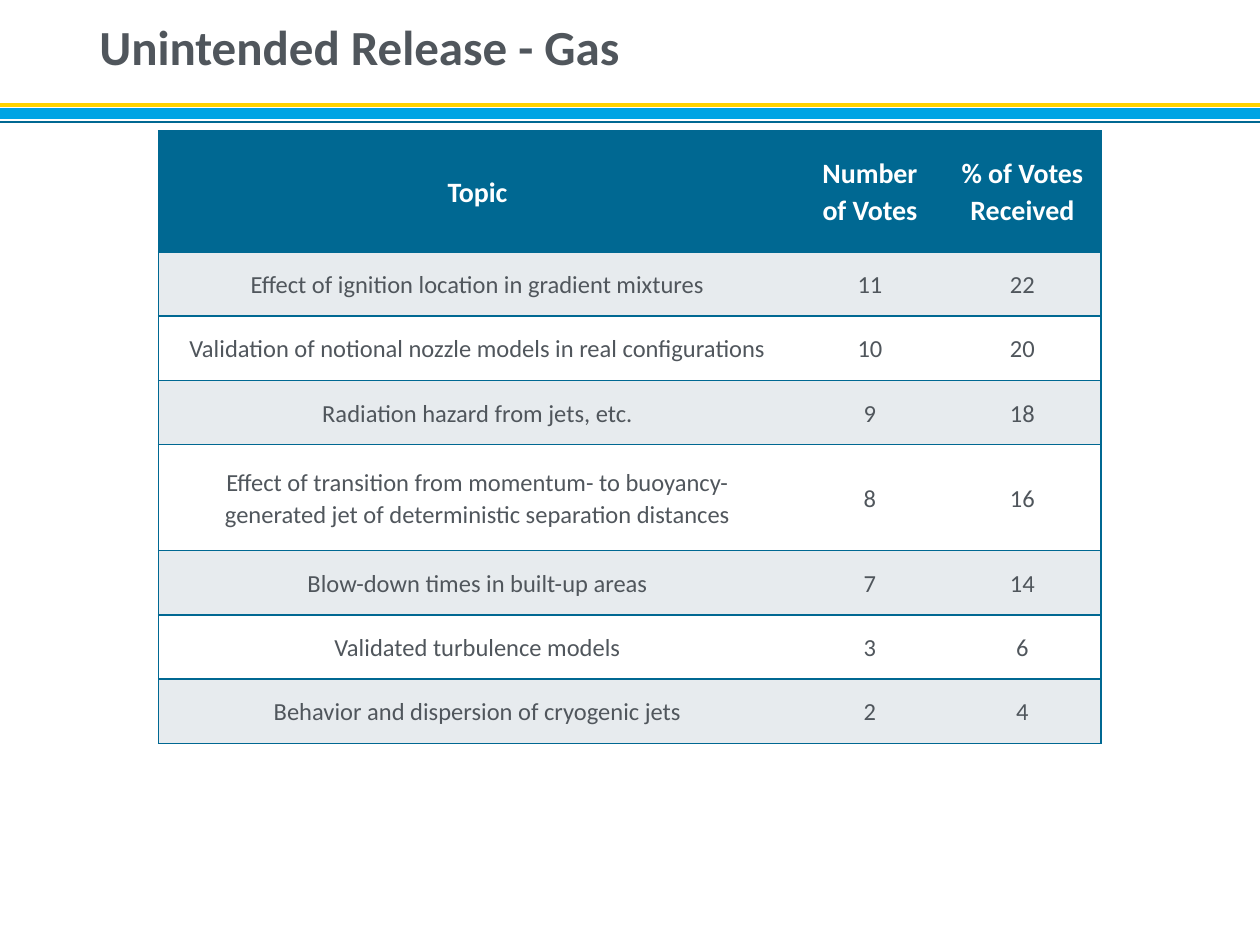
"""Build the slide with the vote table on unintended gas releases."""
from lxml.etree import SubElement
from pptx import Presentation
from pptx.dml.color import RGBColor
from pptx.enum.shapes import MSO_CONNECTOR
from pptx.enum.text import MSO_ANCHOR, PP_ALIGN
from pptx.oxml.ns import qn
from pptx.util import Inches, Pt

FONT = "Calibri"
COLORS = {
    "text": "50565C",
    "teal": "006892",
    "blue": "00A4E4",
    "yellow": "FFD200",
    "band": "E7EBEE",
    "white": "FFFFFF",
}
STRIPES = [(0.9, "blue", 6), (0.97, "teal", 1.5), (0.83, "yellow", 2.25)]
COLUMN_WIDTHS = [5.06, 1.17, 1.25]
HEADER_HEIGHT, ROW_HEIGHT, TALL_ROW_HEIGHT = 0.96, 0.51, 0.84
TALL_ROW = 4
ROWS = [
    ("Topic", "Number of Votes", "% of Votes Received"),
    ("Effect of ignition location in gradient mixtures", "11", "22"),
    ("Validation of notional nozzle models in real configurations", "10", "20"),
    ("Radiation hazard from jets, etc.", "9", "18"),
    ("Effect of transition from momentum- to buoyancy- "
     "generated jet of deterministic separation distances", "8", "16"),
    ("Blow-down times in built-up areas", "7", "14"),
    ("Validated turbulence models", "3", "6"),
    ("Behavior and dispersion of cryogenic jets", "2", "4"),
]


def rgb(name):
    return RGBColor.from_string(COLORS[name])


def style_text(paragraph, size, color, bold, spacing):
    paragraph.line_spacing = spacing
    for span in paragraph.runs:
        span.font.name = FONT
        span.font.size = Pt(size)
        span.font.bold = bold
        span.font.color.rgb = rgb(color)


def add_stripe(page, top, color, width):
    stripe = page.shapes.add_connector(
        MSO_CONNECTOR.STRAIGHT, 0, Inches(top), Inches(10), Inches(top))
    stripe.line.color.rgb = rgb(color)
    stripe.line.width = Pt(width)
    SubElement(stripe.element.spPr, qn("a:effectLst"))


def add_title(page, text):
    box = page.shapes.add_textbox(Inches(0.69), 0, Inches(8.62), Inches(0.79))
    frame = box.text_frame
    frame.word_wrap = True
    frame.vertical_anchor = MSO_ANCHOR.MIDDLE
    frame.text = text
    style_text(frame.paragraphs[0], 28, "text", True, 0.9)


def set_borders(cell, visible_sides):
    properties = cell._tc.get_or_add_tcPr()
    for side in "LRTB":
        border = SubElement(properties, qn(f"a:ln{side}"), w=str(Pt(1)))
        if side in visible_sides:
            fill = SubElement(border, qn("a:solidFill"))
            SubElement(fill, qn("a:srgbClr"), val=COLORS["teal"])
        else:
            SubElement(border, qn("a:noFill"))


def fill_cell(cell, text, row, column):
    is_header = row == 0
    sides = {0: "LTB", len(COLUMN_WIDTHS) - 1: "RTB"}.get(column, "TB")
    set_borders(cell, sides)
    cell.fill.solid()
    cell.fill.fore_color.rgb = rgb(
        "teal" if is_header else "band" if row % 2 else "white")
    cell.vertical_anchor = MSO_ANCHOR.MIDDLE
    cell.margin_left = cell.margin_right = Inches(0.13)
    cell.margin_top = cell.margin_bottom = 0
    cell.text_frame.text = text
    paragraph = cell.text_frame.paragraphs[0]
    paragraph.alignment = PP_ALIGN.CENTER
    style_text(paragraph, 16 if is_header else 14,
               "white" if is_header else "text", is_header, 1.07)


def add_vote_table(page):
    heights = [ROW_HEIGHT] * len(ROWS)
    heights[0], heights[TALL_ROW] = HEADER_HEIGHT, TALL_ROW_HEIGHT
    table = page.shapes.add_table(
        len(ROWS), len(COLUMN_WIDTHS), Inches(1.26), Inches(1.04),
        Inches(sum(COLUMN_WIDTHS)), Inches(sum(heights))).table
    for column, width in zip(table.columns, COLUMN_WIDTHS):
        column.width = Inches(width)
    for row, height in zip(table.rows, heights):
        row.height = Inches(height)
    for row, texts in enumerate(ROWS):
        for column, text in enumerate(texts):
            fill_cell(table.cell(row, column), text, row, column)


def main():
    deck = Presentation()
    deck.slide_width, deck.slide_height = Inches(10), Inches(7.5)
    page = deck.slides.add_slide(deck.slide_layouts[6])
    for stripe in STRIPES:
        add_stripe(page, *stripe)
    add_title(page, "Unintended Release - Gas")
    add_vote_table(page)
    deck.save("out.pptx")


if __name__ == "__main__":
    main()
